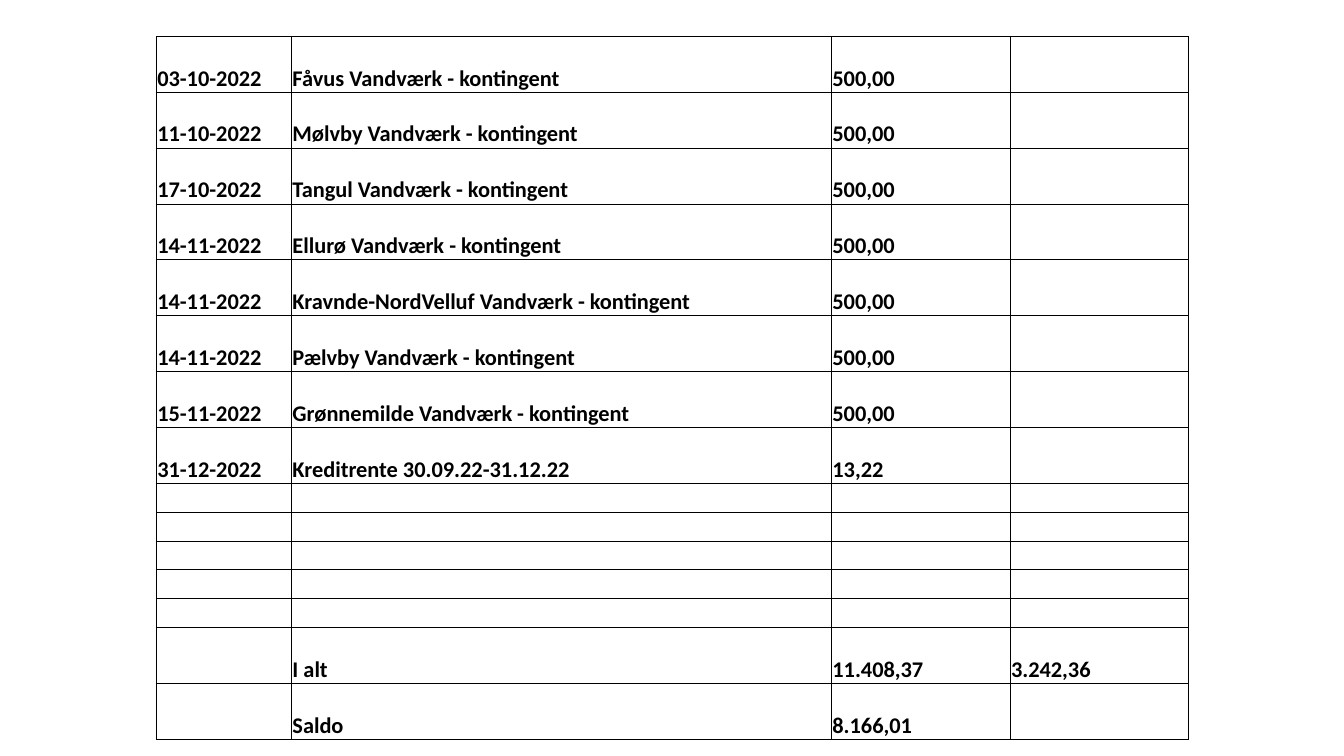
from dataclasses import dataclass

from lxml.etree import SubElement
from pptx import Presentation
from pptx.dml.color import RGBColor
from pptx.enum.text import MSO_ANCHOR as Anchor, PP_ALIGN as Align
from pptx.oxml import parse_xml
from pptx.oxml.ns import nsdecls, qn
from pptx.util import Inches, Pt


@dataclass(frozen=True)
class Theme:
    font: str = "Calibri"
    body_size: int = 16
    ink: str = "000000"
    rule_width: float = 0.5
    inset: float = 0.01


ENTRIES = [
    ("03-10-2022", "Fåvus Vandværk - kontingent", "500,00", ""),
    ("11-10-2022", "Mølvby Vandværk - kontingent", "500,00", ""),
    ("17-10-2022", "Tangul Vandværk - kontingent", "500,00", ""),
    ("14-11-2022", "Ellurø Vandværk - kontingent", "500,00", ""),
    ("14-11-2022", "Kravnde-NordVelluf Vandværk - kontingent", "500,00", ""),
    ("14-11-2022", "Pælvby Vandværk - kontingent", "500,00", ""),
    ("15-11-2022", "Grønnemilde Vandværk - kontingent", "500,00", ""),
    ("31-12-2022", "Kreditrente 30.09.22-31.12.22", "13,22", ""),
]
SPACERS = [("", "", "", "")] * 5
TOTALS = [
    ("", "I alt", "11.408,37", "3.242,36"),
    ("", "Saldo", "8.166,01", ""),
]
COLUMN_WEIGHTS = (1.34, 5.35, 1.77, 1.77)
TALL_ROW, SPACER_ROW = 1.94, 1


def write(frame, text, *, size, font, color, bold=False, align=Align.LEFT):
    """Put one formatted paragraph into a text frame."""
    paragraph = frame.paragraphs[0]
    paragraph.alignment = align
    if not text:
        SubElement(paragraph._p, qn("a:endParaRPr"), sz=str(size * 100))
        return
    run = paragraph.add_run()
    run.text = text
    run.font.size = Pt(size)
    run.font.name = font
    run.font.bold = bold
    run.font.color.rgb = RGBColor.from_string(color)


class SlideBuilder:
    """Draw elements on the current slide in one theme."""

    def __init__(self, deck, theme):
        self.deck = deck
        self.theme = theme
        self.slide = deck.slides.add_slide(deck.slide_layouts[6])

    def ledger(self, entries, left, top, width, height, columns, rows):
        """Draw a ruled table placed by shares of the slide and grid weights."""
        across, down = self.deck.slide_width, self.deck.slide_height
        full_width, full_height = int(width * across), int(height * down)
        table = self.slide.shapes.add_table(
            len(entries), len(columns),
            int(left * across), int(top * down), full_width, full_height,
        ).table
        table.first_row = table.horz_banding = False
        for column, weight in zip(table.columns, columns):
            column.width = int(full_width * weight / sum(columns))
        for row, weight in zip(table.rows, rows):
            row.height = int(full_height * weight / sum(rows))
        for row, entry in zip(table.rows, entries):
            for cell, text in zip(row.cells, entry):
                self.ledger_cell(cell, text)

    def ledger_cell(self, cell, text):
        """Fill in one cell and rule its four sides."""
        theme = self.theme
        cell.vertical_anchor = Anchor.BOTTOM
        cell.margin_left = cell.margin_right = cell.margin_top = Inches(theme.inset)
        cell.margin_bottom = 0
        cell.fill.background()
        write(cell.text_frame, text, size=theme.body_size, font=theme.font,
              color=theme.ink, bold=True)
        properties = cell._tc.get_or_add_tcPr()
        for position, side in enumerate("LRTB"):
            properties.insert(position, parse_xml(
                f'<a:ln{side} {nsdecls("a")} w="{Pt(theme.rule_width)}">'
                f'<a:solidFill><a:srgbClr val="{theme.ink}"/></a:solidFill>'
                f'</a:ln{side}>'
            ))


def main():
    """Build and save the ledger slide."""
    deck = Presentation()
    deck.slide_width, deck.slide_height = Inches(13.33), Inches(7.5)
    entries = ENTRIES + SPACERS + TOTALS
    row_weights = [TALL_ROW if any(entry) else SPACER_ROW for entry in entries]
    SlideBuilder(deck, Theme()).ledger(
        entries, left=1.55 / 13.33, top=0.36 / 7.5, width=10.24 / 13.33,
        height=0.93, columns=COLUMN_WEIGHTS, rows=row_weights,
    )
    deck.save("out.pptx")


if __name__ == "__main__":
    main()
